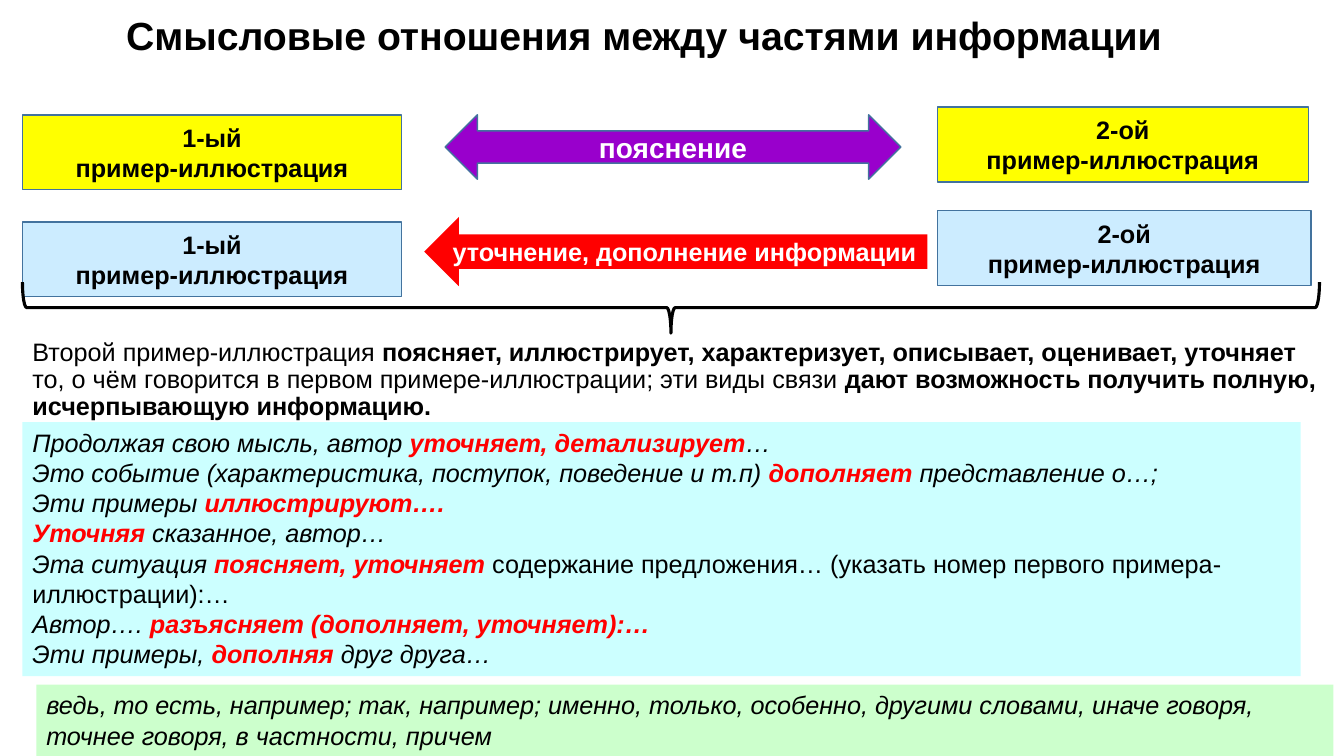
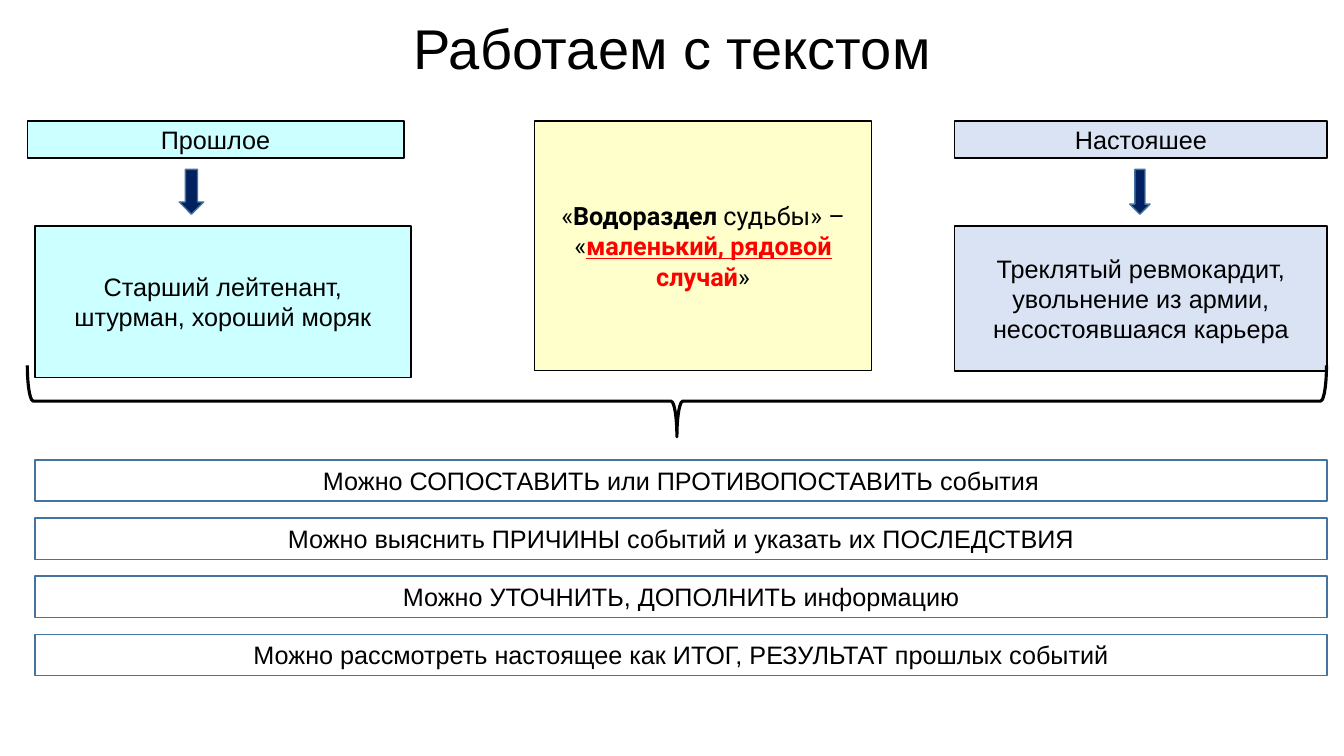
from pptx import Presentation
from pptx.dml.color import RGBColor
from pptx.enum import shapes, text
from pptx.oxml.ns import qn
from pptx.util import Pt

BLACK = RGBColor(0x00, 0x00, 0x00)
WHITE = RGBColor(0xFF, 0xFF, 0xFF)
RED = RGBColor(0xFF, 0x00, 0x00)
YELLOW = RGBColor(0xFF, 0xFF, 0x00)
CREAM = RGBColor(0xFF, 0xFF, 0xCC)
SKY = RGBColor(0xCC, 0xEC, 0xFF)
CYAN = RGBColor(0xCC, 0xFF, 0xFF)
GREEN = RGBColor(0xCC, 0xFF, 0xCC)
LAVENDER = RGBColor(0xDA, 0xE3, 0xF3)
VIOLET = RGBColor(0x99, 0x00, 0xCC)
NAVY = RGBColor(0x00, 0x20, 0x60)
STEEL = RGBColor(0x43, 0x73, 0x9E)

FONT = "Arial"
BODY_SIZE = 18
KIND = shapes.MSO_SHAPE
ALIGN = text.PP_ALIGN
ANCHOR = text.MSO_ANCHOR

FIRST = "1-ый\nпример-иллюстрация"
SECOND = "2-ой\nпример-иллюстрация"

SUMMARY = [[
    ("Второй пример-иллюстрация ", ""),
    ("поясняет, иллюстрирует, характеризует, описывает, оценивает, уточняет ", "b"),
    ("то, о чём говорится в первом примере-иллюстрации; эти виды связи ", ""),
    ("дают возможность получить полную, исчерпывающую информацию.", "b"),
]]

PHRASES = [
    [("Продолжая свою мысль, автор ", "i"), ("уточняет, детализирует", "bir"), ("…", "i")],
    [("Это событие (характеристика, поступок, поведение и т.п) ", "i"),
     ("дополняет ", "bir"), ("представление о…;", "i")],
    [("Эти примеры ", "i"), ("иллюстрируют….", "bir")],
    [("Уточняя ", "bir"), ("сказанное, автор…", "i")],
    [("Эта ситуация ", "i"), ("поясняет, уточняет", "bir"),
     (" содержание предложения… (указать номер первого примера-иллюстрации):…", "")],
    [("Автор…. ", "i"), ("разъясняет (дополняет, уточняет):…", "bir")],
    [("Эти примеры, ", "i"), ("дополняя ", "bir"), ("друг друга…", "i")],
]

LINKERS = [[(
    "ведь, то есть, например; так, например; именно, только, особенно, "
    "другими словами, иначе говоря, точнее говоря, в частности, причем", "i")]]

WATERSHED = [
    [("«", ""), ("Водораздел", "b"), (" судьбы» –", "")],
    [("«", ""), ("маленький, рядовой ", "bru"), ("случай", "br"), ("»", "")],
]

CONCLUSIONS = [
    "Можно СОПОСТАВИТЬ или ПРОТИВОПОСТАВИТЬ события",
    "Можно выяснить ПРИЧИНЫ событий и указать их ПОСЛЕДСТВИЯ",
    "Можно УТОЧНИТЬ, ДОПОЛНИТЬ информацию",
    "Можно рассмотреть настоящее как ИТОГ, РЕЗУЛЬТАТ прошлых событий",
]


def plain(words, style=""):
    return [[(line, style)] for line in words.split("\n")]


def move(sp, box):
    sp.left, sp.top, sp.width, sp.height = (Pt(v) for v in box)


def write(sp, paragraphs, size=BODY_SIZE, color=BLACK, align=ALIGN.CENTER,
          anchor=ANCHOR.MIDDLE, font=FONT, spacing=1.0):
    tf = sp.text_frame
    tf.word_wrap = True
    tf.auto_size = text.MSO_AUTO_SIZE.NONE
    tf.vertical_anchor = anchor
    for i, runs in enumerate(paragraphs):
        p = tf.add_paragraph() if i else tf.paragraphs[0]
        p.alignment = align
        p.line_spacing = spacing
        p.space_before = Pt(0)
        for words, style in runs:
            r = p.add_run()
            r.text = words
            r.font.name = font
            r.font.size = Pt(size)
            r.font.bold = "b" in style
            r.font.italic = "i" in style
            r.font.underline = "u" in style
            r.font.color.rgb = RED if "r" in style else color


def add_block(s, kind, box, fill=None, line=None, width=1):
    sp = s.shapes.add_shape(kind, *(Pt(v) for v in box))
    sp.shadow.inherit = False
    if fill is None:
        sp.fill.background()
    else:
        sp.fill.solid()
        sp.fill.fore_color.rgb = fill
    if line is None:
        sp.line.fill.background()
    else:
        sp.line.color.rgb = line
        sp.line.width = Pt(width)
    return sp


def add_title(s, box, words, size, bold=False):
    move(s.shapes.title, box)
    write(s.shapes.title, plain(words, "b" if bold else ""), size, spacing=0.9)


def add_brace(s, box):
    left, top, width, height = box
    upright = (left + (width - height) / 2, top + (height - width) / 2, height, width)
    sp = add_block(s, KIND.RIGHT_BRACE, upright, line=BLACK, width=2.25)
    sp.rotation = 90


def add_summary(s, box):
    sp = s.placeholders[1]
    move(sp, box)
    write(sp, SUMMARY, align=ALIGN.LEFT, anchor=ANCHOR.TOP, spacing=0.9)
    for p in sp.text_frame.paragraphs:
        pPr = p._p.get_or_add_pPr()
        pPr.set("marL", "0")
        pPr.set("indent", "0")
        pPr.append(pPr.makeelement(qn("a:buNone"), {}))


def add_relation(s, first_box, second_box, fill, kind, arrow_box, arrow_style, label):
    for box, words in ((first_box, FIRST), (second_box, SECOND)):
        write(add_block(s, KIND.RECTANGLE, box, fill, STEEL), plain(words, "b"))
    arrow_fill, arrow_line, size = arrow_style
    arrow = add_block(s, kind, arrow_box, arrow_fill, arrow_line)
    write(arrow, plain(label, "b"), size, WHITE)


def add_phrase_panel(s, box, fill, paragraphs):
    sp = add_block(s, KIND.RECTANGLE, box, fill)
    write(sp, paragraphs, align=ALIGN.LEFT, anchor=ANCHOR.TOP)


def add_period(s, head_box, arrow_box, event_box, fill, name, event):
    for box, words in ((head_box, name), (event_box, event)):
        write(add_block(s, KIND.RECTANGLE, box, fill, BLACK), plain(words))
    add_block(s, KIND.DOWN_ARROW, arrow_box, NAVY, STEEL)


def add_conclusions(s, box, row_height):
    left, top, width, height = box
    step = (height - row_height) / (len(CONCLUSIONS) - 1)
    for i, words in enumerate(CONCLUSIONS):
        row = (left, top + i * step, width, row_height)
        write(add_block(s, KIND.RECTANGLE, row, line=STEEL), plain(words))


def build_relations(prs):
    s = prs.slides.add_slide(prs.slide_layouts[1])
    add_title(s, (12, 11, 896, 32), "Смысловые отношения между частями информации", 28, True)
    add_summary(s, (16, 239, 937, 66))
    add_relation(s, (16, 82, 271, 53.5), (669.5, 76.5, 265, 53.5), YELLOW,
                 KIND.LEFT_RIGHT_ARROW, (318, 82, 325.5, 46),
                 (VIOLET, STEEL, 20), "пояснение")
    add_relation(s, (16, 158.5, 271, 53.5), (669.5, 150.5, 267, 53.5), SKY,
                 KIND.LEFT_ARROW, (303, 155, 359.5, 49.5),
                 (RED, None, 18), "уточнение, дополнение информации")
    add_brace(s, (16, 201.5, 926.5, 36.5))
    add_phrase_panel(s, (16, 301.5, 913, 181.5), CYAN, PHRASES)
    add_phrase_panel(s, (26, 489, 926.5, 51), GREEN, LINKERS)


def build_text_work(prs):
    s = prs.slides.add_slide(prs.slide_layouts[5])
    add_title(s, (48, 21.5, 864, 31), "Работаем с текстом", 40)
    add_period(s, (19.5, 86.5, 269, 26.5), (128, 121, 17.5, 32), (25, 161.5, 268.5, 108),
               CYAN, "Прошлое", "Старший лейтенант, штурман, хороший моряк")
    add_period(s, (682, 86.5, 266, 26.5), (807, 121, 14.5, 32), (682, 161.5, 266, 103.5),
               LAVENDER, "Настояшее",
               "Треклятый ревмокардит, увольнение из армии, несостоявшаяся карьера")
    center = add_block(s, KIND.RECTANGLE, (382, 86.5, 240.5, 178), CREAM, BLACK)
    write(center, WATERSHED, font="Roboto")
    add_brace(s, (19.5, 261, 928, 51))
    add_conclusions(s, (25, 328.5, 923, 154), 29.5)


def main():
    prs = Presentation()
    prs.slide_width, prs.slide_height = Pt(960), Pt(540)
    build_relations(prs)
    build_text_work(prs)
    prs.save("out.pptx")


if __name__ == "__main__":
    main()
